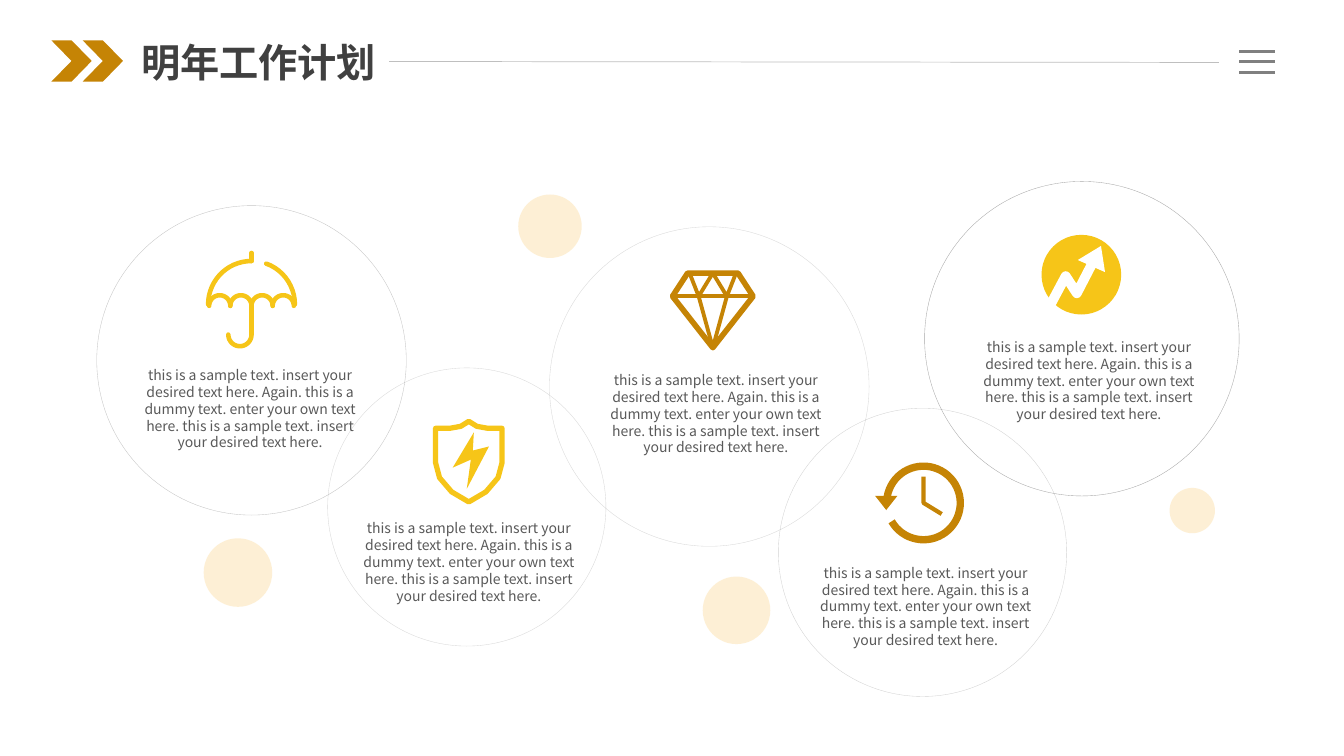
from dataclasses import dataclass
from math import cos, radians, sin

from lxml import etree
from pptx import Presentation
from pptx import util as u
from pptx.dml.color import RGBColor
from pptx.enum import shapes, text
from pptx.oxml.ns import qn


@dataclass(frozen=True)
class Theme:
    """Colours, font and type sizes of the slide."""
    white: str = "FFFFFF"
    gold: str = "F6C518"
    amber: str = "C58405"
    cream: str = "FCD487"
    dark: str = "404040"
    black: str = "262626"
    body: str = "595959"
    rule: str = "BFBFBF"
    menu: str = "808080"
    font: str = "Noto Sans CJK SC"
    title_size: int = 28
    body_size: int = 10
    body_pitch: int = 12


THEME = Theme()
SAMPLE = ("this is a sample text. insert your desired text here. Again. this is a dummy text. "
          "enter your own text here. this is a sample text. insert your desired text here.")


def set_opacity(shape, percent):
    """Make the colours set on a shape partly transparent."""
    for colour in shape.element.spPr.iter(qn("a:srgbClr")):
        etree.SubElement(colour, qn("a:alpha")).set("val", str(percent * 1000))


def paint(shape, colour):
    """Give a shape a plain fill without line or shadow."""
    shape.shadow.inherit = False
    shape.fill.solid()
    shape.fill.fore_color.rgb = RGBColor.from_string(colour)
    shape.line.fill.background()


def outline(shape, colour, width):
    """Give a shape a line without fill or shadow."""
    shape.shadow.inherit = False
    shape.fill.background()
    shape.line.color.rgb = RGBColor.from_string(colour)
    shape.line.width = u.Pt(width)


def style_text(frame, size, colour, bold=False):
    """Format every run in a text frame."""
    for paragraph in frame.paragraphs:
        for run in paragraph.runs:
            run.font.size, run.font.bold = u.Pt(size), bold
            run.font.name = THEME.font
            run.font.color.rgb = RGBColor.from_string(colour)
            etree.SubElement(run.font._element, qn("a:ea")).set("typeface", THEME.font)


def add_preset(parent, kind, left, top, width, height):
    """Add a preset shape measured in inches."""
    return parent.add_shape(kind, *map(u.Inches, (left, top, width, height)))


def add_circle(parent, left, top, size):
    """Add a circle measured in inches."""
    return add_preset(parent, shapes.MSO_SHAPE.OVAL, left, top, size, size)


def arc(x, y, radius, start, end):
    """Return points along a clockwise arc given in degrees."""
    count = max(8, abs(end - start) // 6)
    angles = [radians(start + (end - start) * i / count) for i in range(count + 1)]
    return [(x + radius * cos(a), y + radius * sin(a)) for a in angles]


def build_outline(parent, contours, close):
    """Build one freeform from contours in inches."""
    scaled = [[(u.Inches(x), u.Inches(y)) for x, y in contour] for contour in contours]
    builder = parent.build_freeform(*scaled[0][0])
    for first, *rest in scaled:
        builder.move_to(first[0], first[1])
        builder.add_line_segments(rest, close=close)
    return builder.convert_to_shape()


def add_filled(parent, contour, colour):
    """Add a filled polygon."""
    paint(build_outline(parent, [contour], True), colour)


def add_stroked(parent, contours, colour, width, close=False, cap="rnd"):
    """Add lines of one width as a single freeform."""
    strokes = build_outline(parent, contours, close)
    outline(strokes, colour, width)
    strokes.line._get_or_add_ln().set("cap", cap)


def add_umbrella(parent):
    """Draw the umbrella icon."""
    x, y, radius, scallop = 2.495, 3.02, 0.43, 0.105
    strokes = [arc(x, y, radius, 180, 270), arc(x, y, radius, 290, 360), [(x, 2.51), (x, 2.59)]]
    strokes += [arc(x + k * scallop, 3.035, scallop, 180, 360) for k in (-3, -1, 1, 3)]
    strokes.append([(x, 3.03)] + arc(x - 0.115, 3.32, 0.115, 0, 180))
    add_stroked(parent, strokes, THEME.gold, 3.25)


def add_shield(parent):
    """Draw the shield icon with its bolt."""
    x = 4.65
    half = [(0, 4.18), (0.08, 4.23), (0.19, 4.25), (0.33, 4.25),
            (0.33, 4.59), (0.29, 4.74), (0.17, 4.88), (0, 4.98)]
    edge = [(x + dx, y) for dx, y in half] + [(x - dx, y) for dx, y in half[-2:0:-1]]
    add_stroked(parent, [edge], THEME.gold, 3.75, close=True)
    add_filled(parent, [(4.7, 4.29), (4.49, 4.64), (4.67, 4.56),
                        (4.63, 4.85), (4.85, 4.43), (4.69, 4.47)], THEME.gold)


def add_diamond(parent):
    """Draw the diamond icon with its facets."""
    x, top, girdle, tip = 7.07, 2.71, 2.94, 3.45
    edge = [(x - 0.4, girdle), (x - 0.25, top), (x + 0.25, top), (x + 0.4, girdle), (x, tip)]
    zigzag = [(x - 0.23, top), (x - 0.14, girdle), (x, top), (x + 0.14, girdle), (x + 0.23, top)]
    pavilion = [(x - 0.14, girdle), (x, tip), (x + 0.14, girdle)]
    add_stroked(parent, [edge], THEME.amber, 4, close=True)
    add_stroked(parent, [zigzag, pavilion, [edge[0], edge[3]]], THEME.amber, 2.75)


def add_clock(parent):
    """Draw the clock icon with its turning arrow."""
    x, y = 9.16, 4.99
    add_stroked(parent, [arc(x, y, 0.365, 190, 510)], THEME.amber, 5.25, cap="flat")
    add_stroked(parent, [[(x, 4.73), (x, y), (9.34, 5.1)]], THEME.amber, 3, cap="flat")
    add_filled(parent, [(8.68, 4.92), (8.9, 4.92), (8.79, 5.06)], THEME.amber)


def add_growth(parent):
    """Draw the disc with a rising arrow."""
    paint(add_circle(parent, 10.33, 2.33, 0.79), THEME.gold)
    zigzag = [(10.42, 3.02), (10.57, 2.74), (10.68, 2.91), (10.83, 2.62)]
    add_stroked(parent, [zigzag], THEME.white, 7, cap="flat")
    add_filled(parent, [(10.92, 2.44), (10.69, 2.58), (10.96, 2.7)], THEME.white)


DOTS = [(5.14, 1.93, 0.63), (11.6, 4.84, 0.45), (6.97, 5.72, 0.67), (2.02, 5.34, 0.68)]
PLANS = [
    ((0.96, 2.04, 3.07), THEME.dark, 30, add_umbrella, (1.3, 3.59)),
    ((3.25, 3.65, 2.76), THEME.dark, 20, add_shield, (3.47, 5.11)),
    ((5.45, 2.25, 3.17), THEME.dark, 20, add_diamond, (5.92, 3.64)),
    ((7.72, 4.05, 2.86), THEME.black, 20, add_clock, (8, 5.55)),
    ((9.17, 1.8, 3.12), THEME.black, 40, add_growth, (9.62, 3.31)),
]


def add_caption(parent, left, top):
    """Add the centred sample text."""
    frame = parent.add_textbox(*map(u.Inches, (left, top, 2.36, 0.94))).text_frame
    frame.word_wrap = True
    frame.text = SAMPLE
    frame.paragraphs[0].alignment = text.PP_ALIGN.CENTER
    frame.paragraphs[0].line_spacing = u.Pt(THEME.body_pitch)
    style_text(frame, THEME.body_size, THEME.body)


def add_rule(parent, start, end, colour, width):
    """Add a straight line between two points in inches."""
    rule = parent.add_connector(shapes.MSO_CONNECTOR.STRAIGHT, *map(u.Inches, start + end))
    rule.line.color.rgb = RGBColor.from_string(colour)
    rule.line.width = u.Pt(width)
    etree.SubElement(rule._element.spPr, qn("a:effectLst"))


def add_header(slide):
    """Add the chevrons, title, rule and menu mark."""
    for left in (0.51, 0.82):
        paint(add_preset(slide.shapes, shapes.MSO_SHAPE.CHEVRON, left, 0.4, 0.4, 0.41), THEME.amber)
    add_rule(slide.shapes, (3.86, 0.61), (12.09, 0.62), THEME.rule, 0.5)
    for y in (0.51, 0.61, 0.72):
        add_rule(slide.shapes, (12.29, y), (12.65, y), THEME.menu, 2.25)
    title = slide.shapes.title
    title.left, title.top, title.width, title.height = map(u.Inches, (1.3, 0.33, 2.56, 0.57))
    frame = title.text_frame
    frame.text = "明年工作计划"
    frame.word_wrap = False
    frame.vertical_anchor = text.MSO_ANCHOR.MIDDLE
    frame.paragraphs[0].alignment = text.PP_ALIGN.LEFT
    style_text(frame, THEME.title_size, THEME.dark, bold=True)


def main():
    """Build and save the slide."""
    deck = Presentation()
    deck.slide_width, deck.slide_height = u.Inches(13.33), u.Inches(7.5)
    slide = deck.slides.add_slide(deck.slide_layouts.get_by_name("Title Only"))
    for place in DOTS:
        dot = add_circle(slide.shapes, *place)
        paint(dot, THEME.cream)
        set_opacity(dot, 35)
    for place, colour, opacity, add_icon, caption in PLANS:
        plan = slide.shapes.add_group_shape().shapes
        ring = add_circle(plan, *place)
        outline(ring, colour, 0.25)
        set_opacity(ring, opacity)
        add_icon(plan)
        add_caption(plan, *caption)
    add_header(slide)
    deck.save("out.pptx")


if __name__ == "__main__":
    main()
